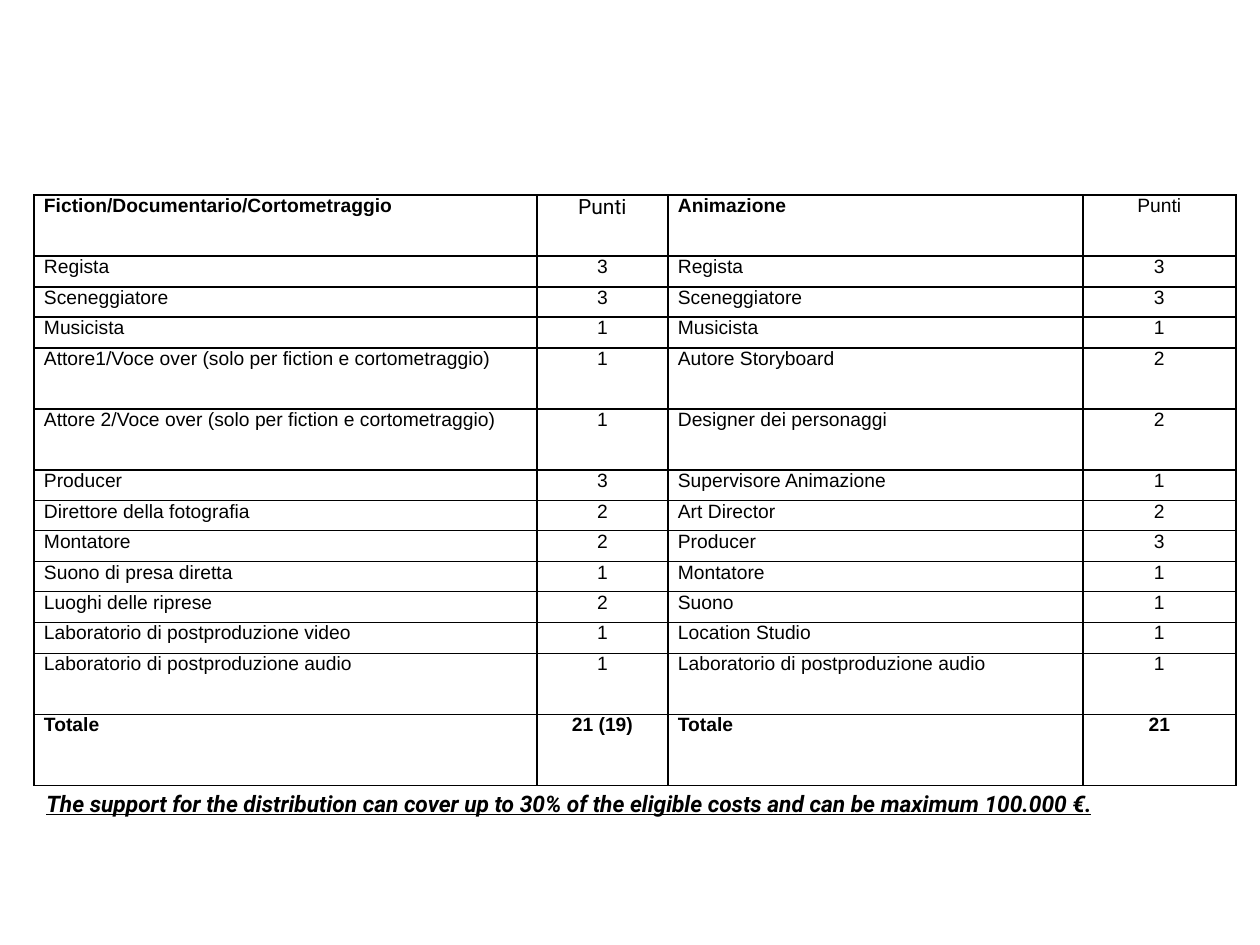
import pptx
import pptx.util
import pptx.dml.color
import pptx.enum.text
import lxml.etree
import pptx.oxml.ns

PX = 914400 / 126
BLACK = pptx.dml.color.RGBColor(0, 0, 0)
ALIGN = pptx.enum.text.PP_ALIGN

COLS = [503, 131, 415, 153]
EDGES = [195, 256, 287, 317, 348, 409, 470, 501, 531, 562, 592, 623, 654, 715, 786]
NOTE = ("The support for the distribution can cover up to 30% of the eligible "
        "costs and can be maximum 100.000 €.")
ROWS = [
    ("Fiction/Documentario/Cortometraggio", "Punti", "Animazione", "Punti"),
    ("Regista", "3", "Regista", "3"),
    ("Sceneggiatore", "3", "Sceneggiatore", "3"),
    ("Musicista", "1", "Musicista", "1"),
    ("Attore1/Voce over (solo per fiction e cortometraggio)", "1", "Autore Storyboard", "2"),
    ("Attore 2/Voce over (solo per fiction e cortometraggio)", "1", "Designer dei personaggi", "2"),
    ("Producer", "3", "Supervisore Animazione", "1"),
    ("Direttore della fotografia", "2", "Art Director", "2"),
    ("Montatore", "2", "Producer", "3"),
    ("Suono di presa diretta", "1", "Montatore", "1"),
    ("Luoghi delle riprese", "2", "Suono", "1"),
    ("Laboratorio di postproduzione video", "1", "Location Studio", "1"),
    ("Laboratorio di postproduzione audio", "1", "Laboratorio di postproduzione audio", "1"),
    ("Totale", "21 (19)", "Totale", "21"),
]


def px(n):
    return pptx.util.Emu(round(n * PX))


def style(par, name, size, bold):
    par.font.name = name
    par.font.size = pptx.util.Pt(size)
    par.font.bold = bold
    par.font.color.rgb = BLACK


def add_edges(cell):
    props = cell._tc.get_or_add_tcPr()
    qn = pptx.oxml.ns.qn
    for i, side in enumerate(("lnL", "lnR", "lnT", "lnB")):
        line = lxml.etree.Element(qn("a:" + side), w="12700")
        fill = lxml.etree.SubElement(line, qn("a:solidFill"))
        lxml.etree.SubElement(fill, qn("a:srgbClr"), val=str(BLACK))
        props.insert(i, line)


def fill_cell(cell, text, row, col):
    cell.margin_left = cell.margin_right = px(10)
    cell.margin_top = cell.margin_bottom = 0
    cell.fill.background()
    add_edges(cell)
    par = cell.text_frame.paragraphs[0]
    par.text = text
    par.alignment = ALIGN.CENTER if col % 2 else ALIGN.LEFT
    bold = row == len(ROWS) - 1 or (row == 0 and col % 2 == 0)
    if (row, col) == (0, 1):
        style(par, "Roboto", 12, bold)
    else:
        style(par, "Arial", 11, bold)


def add_points(slide):
    frame = slide.shapes.add_table(len(ROWS), len(COLS), px(34), px(EDGES[0]),
                                   px(sum(COLS)), px(EDGES[-1] - EDGES[0]))
    table = frame.table
    table.first_row = table.horz_banding = False
    for col, width in zip(table.columns, COLS):
        col.width = px(width)
    for row, top, end in zip(table.rows, EDGES, EDGES[1:]):
        row.height = px(end - top)
    for r, texts in enumerate(ROWS):
        for c, text in enumerate(texts):
            fill_cell(table.cell(r, c), text, r, c)


def add_note(slide):
    box = slide.shapes.add_textbox(px(34), px(770), px(1226), px(90))
    box.text_frame.word_wrap = True
    par = box.text_frame.paragraphs[0]
    par.text = NOTE
    par.line_spacing = 1.5
    style(par, "Roboto", 13, True)
    par.font.italic = True
    par.font.underline = True


def main():
    deck = pptx.Presentation()
    deck.slide_width = px(1260)
    deck.slide_height = px(945)
    slide = deck.slides.add_slide(deck.slide_layouts[6])
    add_note(slide)
    add_points(slide)
    deck.save("out.pptx")


if __name__ == "__main__":
    main()
